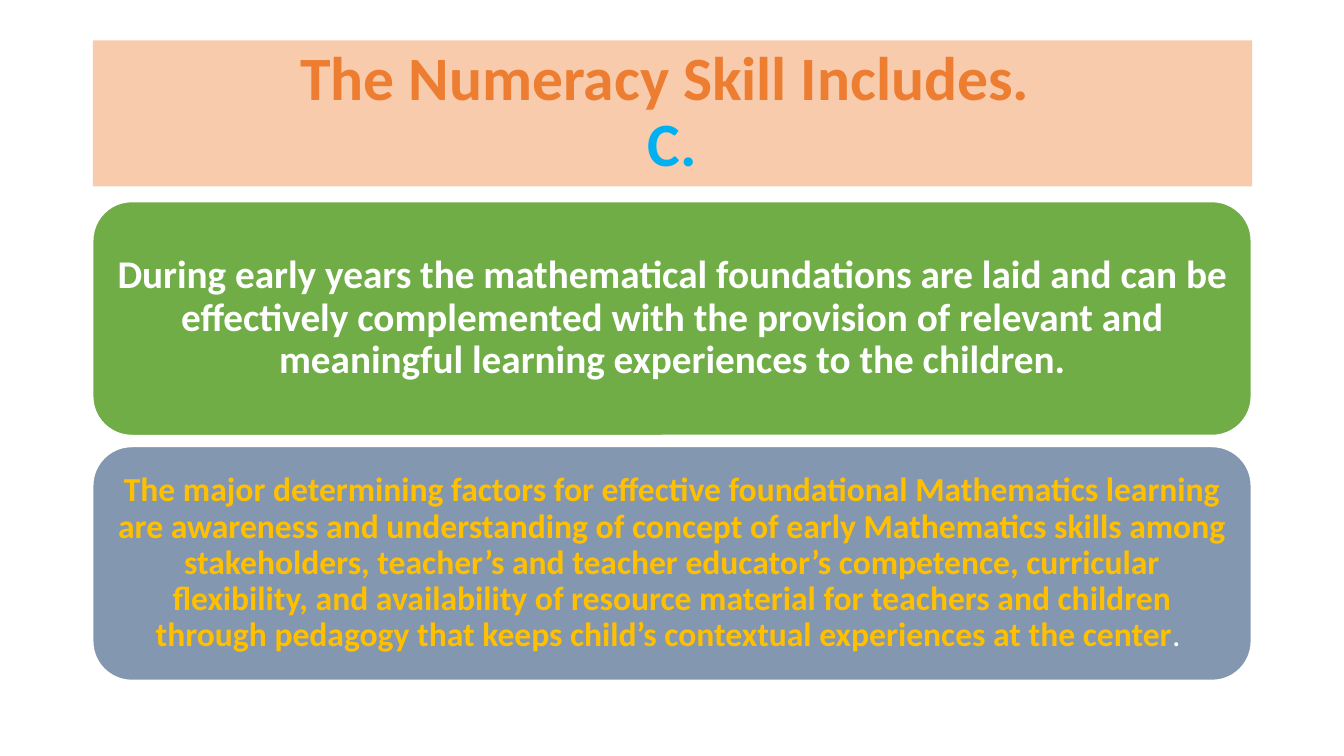
import pptx
import pptx.dml.color
import pptx.enum.shapes
import pptx.enum.text
import pptx.util

Inches = pptx.util.Inches
Pt = pptx.util.Pt


def paint(color_holder, hex_color):
    """Give a fill or a font a solid colour."""
    if hasattr(color_holder, "solid"):
        color_holder.solid()
        color_holder.fore_color.rgb = pptx.dml.color.RGBColor.from_string(hex_color)
    else:
        color_holder.color.rgb = pptx.dml.color.RGBColor.from_string(hex_color)


def format_text(frame, size):
    """Centre the frame's paragraph and set its font."""
    frame.word_wrap = True
    frame.auto_size = pptx.enum.text.MSO_AUTO_SIZE.NONE
    frame.vertical_anchor = pptx.enum.text.MSO_ANCHOR.MIDDLE
    para = frame.paragraphs[0]
    para.alignment = pptx.enum.text.PP_ALIGN.CENTER
    para.line_spacing = 0.9
    para.font.name = "Calibri"
    para.font.size = Pt(size)
    para.font.bold = True
    return para


deck = pptx.Presentation()
deck.slide_width = Inches(13.33)
deck.slide_height = Inches(7.5)
page = deck.slides.add_slide(deck.slide_layouts[5])

# Title band
title = page.shapes.title
title.left, title.top = Inches(0.92), Inches(0.4)
title.width, title.height = Inches(11.5), Inches(1.45)
paint(title.fill, "F8CBAD")
para = format_text(title.text_frame, 44)
span = para.add_run()
span.text = "The Numeracy Skill Includes. "
paint(span.font, "ED7D31")
para.add_line_break()
span = para.add_run()
span.text = "C."
paint(span.font, "00B0F0")

# Statement boxes: fill, text size, side inset, spans of (text, colour, bold)
statements = [
    ("70AD47", 28, 0.12, [
        ("During early years the mathematical foundations are laid and can be "
         "effectively complemented with the provision of relevant and "
         "meaningful learning experiences to the children.", "FFFFFF", True),
    ]),
    ("8497B0", 24, 0.1, [
        ("The major determining factors for effective foundational Mathematics "
         "learning are awareness and understanding of concept of early "
         "Mathematics skills among stakeholders, teacher’s and teacher "
         "educator’s competence, curricular flexibility, and availability of "
         "resource material for teachers and children through pedagogy that "
         "keeps child’s contextual experiences at the center", "FFC000", True),
        (". ", "FFFFFF", False),
    ]),
]
for index, (fill, size, inset, spans) in enumerate(statements):
    box = page.shapes.add_shape(
        pptx.enum.shapes.MSO_SHAPE.ROUNDED_RECTANGLE,
        Inches(0.92), Inches(2 + index * 2.43), Inches(11.49), Inches(2.32))
    box.shadow.inherit = False
    paint(box.fill, fill)
    paint(box.line.fill, "FFFFFF")
    box.line.width = Pt(1)
    frame = box.text_frame
    frame.margin_left = frame.margin_right = Inches(inset)
    frame.margin_top = frame.margin_bottom = Inches(inset / 2)
    para = format_text(frame, size)
    for text, color, bold in spans:
        span = para.add_run()
        span.text = text
        span.font.bold = bold
        paint(span.font, color)

deck.save("out.pptx")
